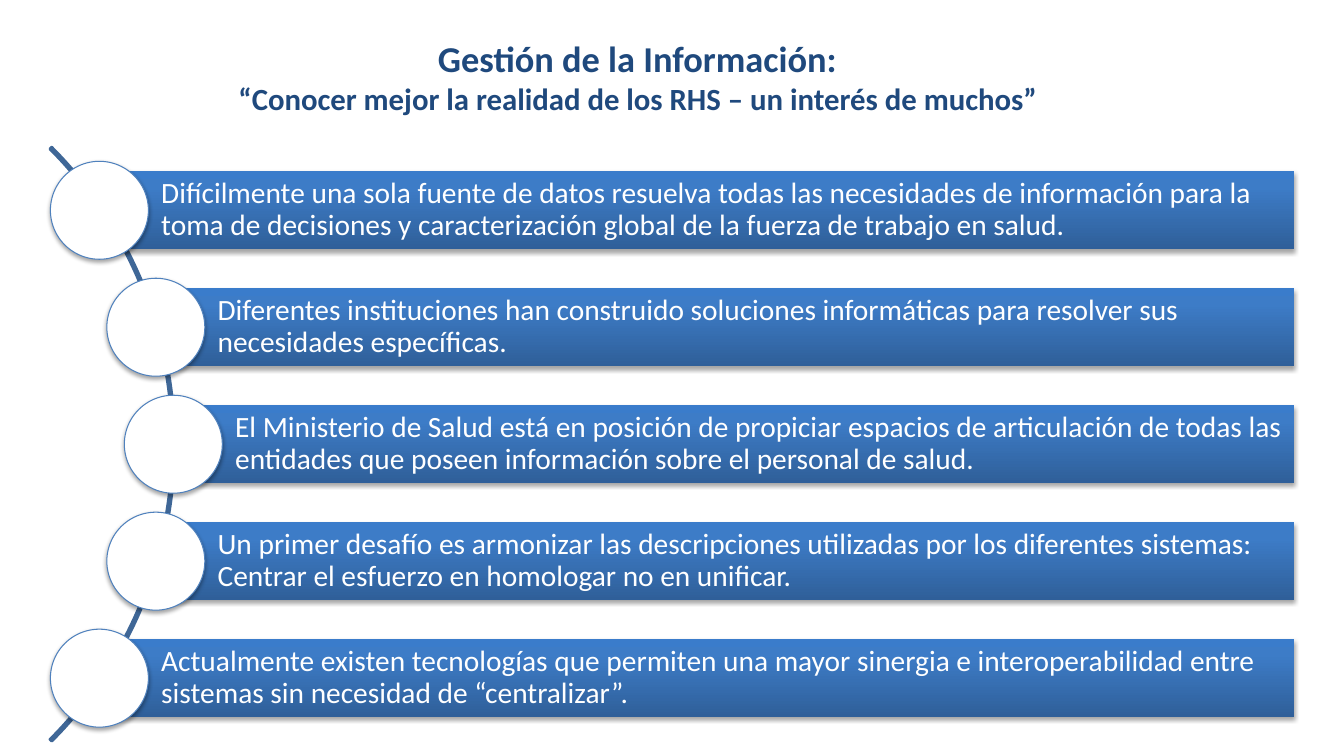
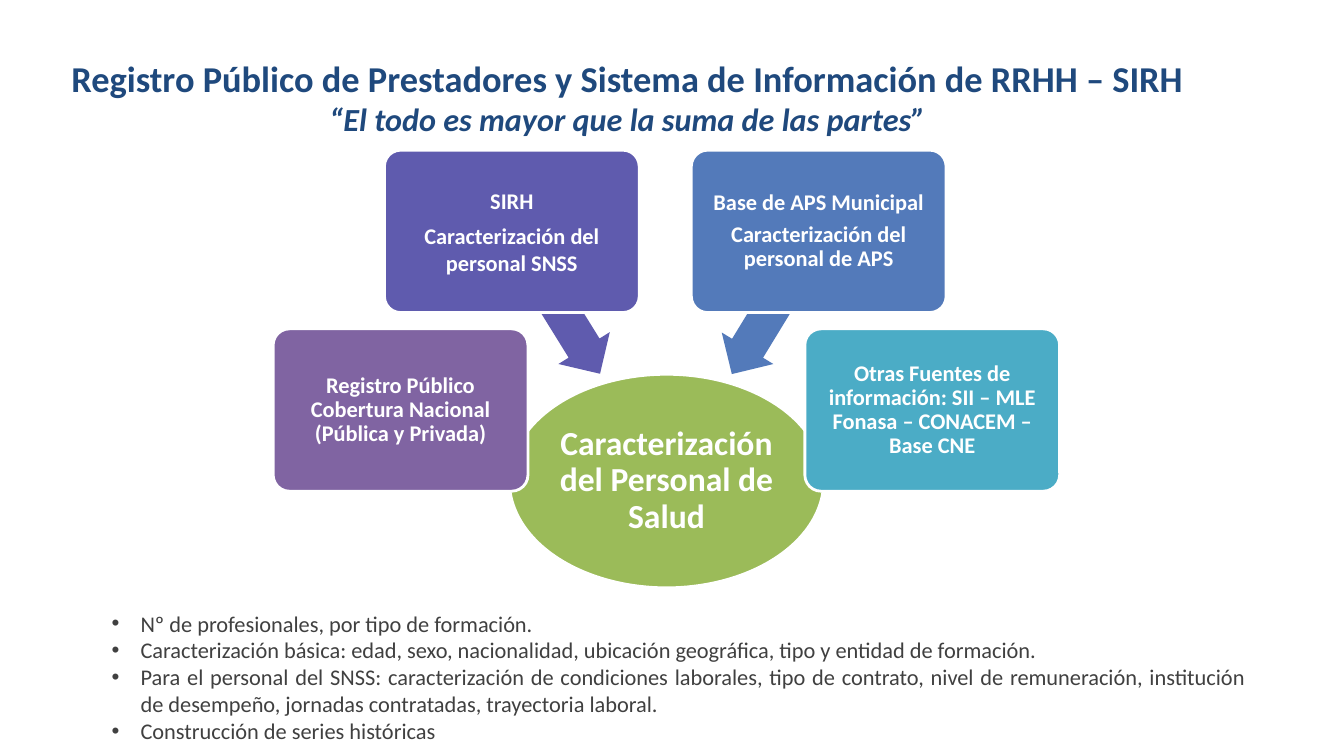
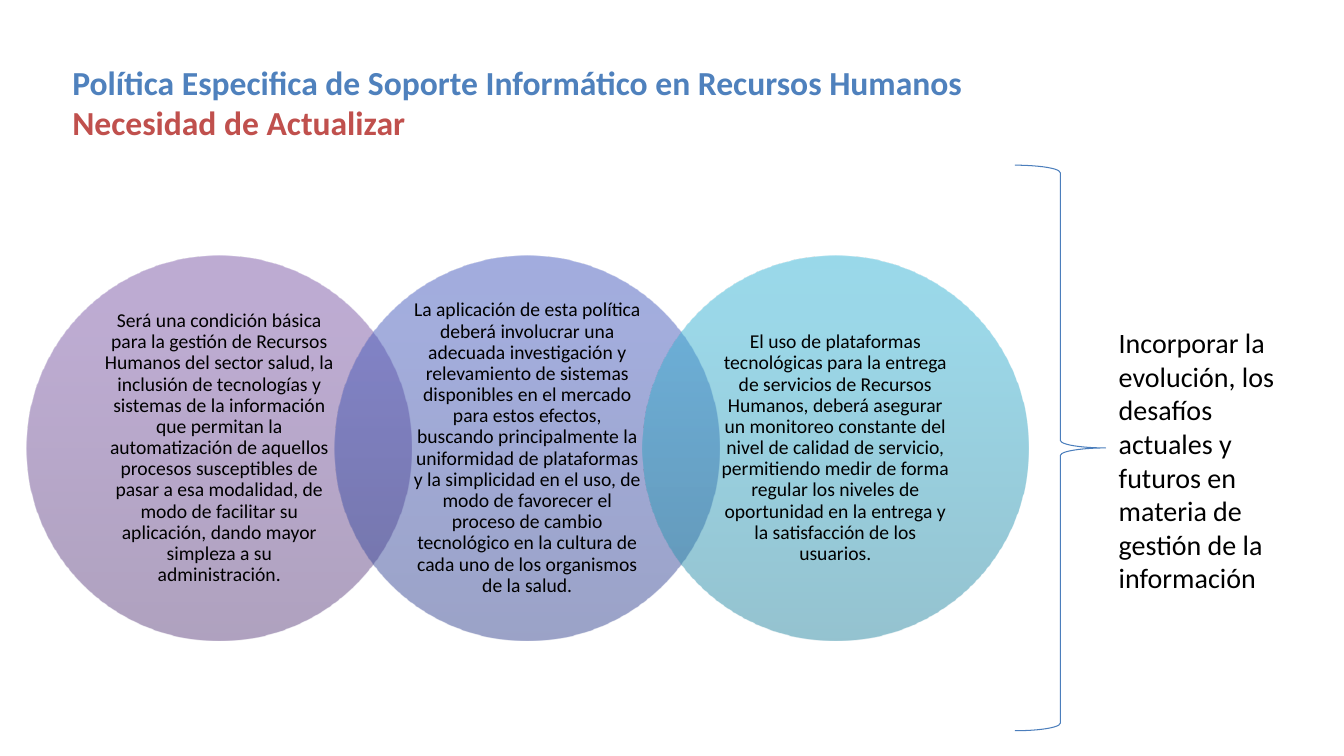
"""Build three slides on health workforce information."""
from dataclasses import dataclass, replace

from lxml.etree import SubElement as sub
from pptx import Presentation
from pptx.dml.color import RGBColor as Rgb
from pptx.enum.shapes import MSO_SHAPE as Geo
from pptx.enum.text import MSO_ANCHOR as Anchor, PP_ALIGN as Align
from pptx.oxml.ns import qn
from pptx.util import Pt


@dataclass(frozen=True)
class Theme:
    """Hold the colours, type sizes and font of the deck."""
    font: str = "Calibri"
    navy: str = "1F497D"
    blue: str = "4F81BD"
    red: str = "C0504D"
    white: str = "FFFFFF"
    black: str = "000000"
    gray: str = "404040"
    arc: str = "3F6797"
    brace: str = "4B7EBC"
    green: str = "9BBB59"
    plum: str = "8064A2"
    violet: str = "5F5BAE"
    steel: str = "537ABA"
    teal: str = "4BACC6"
    bar: tuple = ("2F5F99", "3D7CC7", "3A7CCB")
    rings: tuple = (("5F4480", "7B58A6", "7C57A8"),
                    ("374691", "475BBC", "455ABF"),
                    ("2A88A2", "37B1D2", "34B4D6"))
    head: int = 26
    motto: int = 23
    lead: int = 22
    hub: int = 24
    row: int = 21
    note: int = 20
    card: int = 16
    ring: int = 14


@dataclass(frozen=True)
class Style:
    """Hold the look of one paragraph."""
    size: int
    color: str
    bold: bool = False
    slant: bool = False
    align: Align = Align.CENTER
    pitch: float = 1.0
    after: float = 0
    bullet: bool = False


T = Theme()
HEAD = Style(T.head, T.navy, bold=True)
CARD = Style(T.card, T.white, bold=True, pitch=0.9, after=0.35)
LOOSE = replace(CARD, pitch=1.0)
HUB = replace(CARD, size=T.hub)
ROW = replace(CARD, size=T.row, bold=False, align=Align.LEFT)
RING = replace(CARD, size=T.ring, color=T.black, bold=False)
ITEM = Style(T.card, T.gray, align=Align.JUSTIFY, bullet=True)
NOTE = Style(T.note, T.black, align=Align.LEFT)
POLICY = Style(T.hub, T.blue, bold=True, align=Align.LEFT)

ROWS = (
    (36, "Difícilmente una sola fuente de datos resuelva todas las necesidades de información "
         "para la toma de decisiones y caracterización global de la fuerza de trabajo en salud."),
    (76.3, "Diferentes instituciones han construido soluciones informáticas para resolver sus "
           "necesidades específicas."),
    (88.8, "El Ministerio de Salud está en posición de propiciar espacios de articulación de "
           "todas las entidades que poseen información sobre el personal de salud."),
    (76.3, "Un primer desafío es armonizar las descripciones utilizadas por los diferentes "
           "sistemas: Centrar el esfuerzo en homologar no en unificar."),
    (36, "Actualmente existen tecnologías que permiten una mayor sinergia e interoperabilidad "
         "entre sistemas sin necesidad de “centralizar”."),
)
CARDS = (
    (195.1, 234.9, T.plum, CARD, ("Registro Público Cobertura Nacional (Pública y Privada)",)),
    (274.6, 107.3, T.violet, LOOSE, ("SIRH", "Caracterización del personal SNSS")),
    (493.8, 107.3, T.steel, CARD,
     ("Base de APS Municipal", "Caracterización del personal de APS")),
    (574.9, 234.9, T.teal, CARD,
     ("Otras Fuentes de información: SII – MLE Fonasa – CONACEM – Base CNE",)),
)
ITEMS = (
    "Nº de profesionales, por tipo de formación.",
    "Caracterización básica: edad, sexo, nacionalidad, ubicación geográfica, tipo y entidad "
    "de formación.",
    "Para el personal del SNSS: caracterización de condiciones laborales, tipo de contrato, "
    "nivel de remuneración, institución de desempeño, jornadas contratadas, trayectoria laboral.",
    "Construcción de series históricas",
)
RINGS = (
    "Será una condición básica para la gestión de Recursos Humanos del sector salud, la "
    "inclusión de tecnologías y sistemas de la información que permitan la automatización de "
    "aquellos procesos susceptibles de pasar a esa modalidad, de modo de facilitar su "
    "aplicación, dando mayor simpleza a su administración.",
    "La aplicación de esta política deberá involucrar una adecuada investigación y "
    "relevamiento de sistemas disponibles en el mercado para estos efectos, buscando "
    "principalmente la uniformidad de plataformas y la simplicidad en el uso, de modo de "
    "favorecer el proceso de cambio tecnológico en la cultura de cada uno de los organismos "
    "de la salud.",
    "El uso de plataformas tecnológicas para la entrega de servicios de Recursos Humanos, "
    "deberá asegurar un monitoreo constante del nivel de calidad de servicio, permitiendo "
    "medir de forma regular los niveles de oportunidad en la entrega y la satisfacción de "
    "los usuarios.",
)


def write(frame, lines, anchor=Anchor.MIDDLE, pads=(7.2, 3.6, 7.2, 3.6)):
    """Fill a text frame with (text, style) lines."""
    frame.word_wrap = True
    frame.vertical_anchor = anchor
    (frame.margin_left, frame.margin_top,
     frame.margin_right, frame.margin_bottom) = map(Pt, pads)
    for i, (text, style) in enumerate(lines):
        para = frame.add_paragraph() if i else frame.paragraphs[0]
        para.text = text
        para.alignment = style.align
        para.line_spacing = style.pitch
        para.space_after = Pt(style.after * style.size)
        if style.bullet:
            props = para._p.get_or_add_pPr()
            props.set("marL", str(Pt(20.6)))
            props.set("indent", str(-Pt(20.6)))
            sub(props, qn("a:buFont"), typeface="Arial")
            sub(props, qn("a:buChar"), char="•")
        font = para.font
        font.name, font.size = T.font, Pt(style.size)
        font.bold, font.italic = style.bold, style.slant
        font.color.rgb = Rgb.from_string(style.color)


def label(slide, box, lines, anchor=Anchor.MIDDLE):
    """Add a text box."""
    write(slide.shapes.add_textbox(*map(Pt, box)).text_frame, lines, anchor)


def shape(slide, kind, box, fill=None, line=None, width=0.75, adj=()):
    """Add a flat preset shape."""
    item = slide.shapes.add_shape(kind, *map(Pt, box))
    item.shadow.inherit = False
    for i, value in enumerate(adj):
        item.adjustments[i] = value
    if fill:
        item.fill.solid()
        item.fill.fore_color.rgb = Rgb.from_string(fill)
    else:
        item.fill.background()
    if line:
        item.line.color.rgb = Rgb.from_string(line)
        item.line.width = Pt(width)
    else:
        item.line.fill.background()
    return item


def blend(item, colors, alpha=100):
    """Give a shape an upward three-stop gradient."""
    item.fill.gradient()
    item.fill.gradient_angle = 90
    stops = item.element.spPr.find(qn("a:gradFill")).find(qn("a:gsLst"))
    stops.clear()
    for pos, color in zip((0, 80, 100), colors):
        stop = sub(stops, qn("a:gs"), pos=str(pos * 1000))
        tint = sub(stop, qn("a:srgbClr"), val=color)
        sub(tint, qn("a:alpha"), val=str(alpha * 1000))


def shade(item):
    """Give a shape a soft shadow below it."""
    effects = item.element.spPr.find(qn("a:effectLst"))
    outer = sub(effects, qn("a:outerShdw"), blurRad=str(Pt(3.1)), dist=str(Pt(1.8)),
                dir="5400000", rotWithShape="0")
    tint = sub(outer, qn("a:srgbClr"), val=T.black)
    sub(tint, qn("a:alpha"), val="35000")


def curve(slide):
    """Draw the rows strung along an arc."""
    label(slide, (20, 15, 871, 79), (
        ("Gestión de la Información:", HEAD),
        ("“Conocer mejor la realidad de los RHS – un interés de muchos”",
         replace(HEAD, size=T.lead))))
    shape(slide, Geo.BLOCK_ARC, (-475.2, 17.3, 600, 600), line=T.arc, width=2,
          adj=(189, 27, 0.003))
    dot, tall, right = 70, 55.7, 924.5
    for i, (left, text) in enumerate(ROWS):
        top = 115.2 + i * 83.55
        start = left + dot / 2
        bar = shape(slide, Geo.RECTANGLE,
                    (start, top + (dot - tall) / 2, right - start, tall))
        blend(bar, T.bar)
        shade(bar)
        write(bar.text_frame, [(text, ROW)], pads=(44.2, 4, 4, 4))
        shade(shape(slide, Geo.OVAL, (left, top, dot, dot), T.white, T.blue))


def merge(slide):
    """Draw the sources that feed the hub."""
    label(slide, (27.4, 18.7, 842.4, 101.5), (
        ("Registro Público de Prestadores y Sistema de Información de RRHH – SIRH", HEAD),
        ("“El todo es mayor que la suma de las partes”",
         replace(HEAD, size=T.motto, slant=True))))
    hub = shape(slide, Geo.OVAL, (363.8, 267.3, 224.6, 152.6), T.green, T.white, 2)
    write(hub.text_frame, [("Caracterización del Personal de Salud", HUB)], pads=[1.4] * 4)
    for left, turn, color in ((337, 238.2, T.violet), (494, 301.4, T.steel)):
        arrow = shape(slide, Geo.LEFT_ARROW, (left, 194.4, 120, 43.2), color, adj=(0.6, 0.5))
        arrow.rotation = turn
    for left, top, color, style, lines in CARDS:
        card = shape(slide, Geo.ROUNDED_RECTANGLE, (left, top, 182, 116), color, T.white, 2,
                     adj=(0.1,))
        write(card.text_frame, [(line, style) for line in lines], pads=[2.2] * 4)
    label(slide, (72.7, 432.7, 824.4, 101.5), [(item, ITEM) for item in ITEMS])


def chain(slide):
    """Draw the linked circles and their outcome."""
    label(slide, (44.6, 40.3, 825.8, 65.5), (
        ("Política Especifica de Soporte Informático en Recursos Humanos", POLICY),
        ("Necesidad de Actualizar", replace(POLICY, color=T.red))), Anchor.TOP)
    size = 275
    for i, (text, colors) in enumerate(zip(RINGS, T.rings)):
        ring = shape(slide, Geo.OVAL, (19.2 + i * size * 0.8, 182.7, size, size))
        blend(ring, colors, 50)
        write(ring.text_frame, [(text, RING)], pads=(15.1, 1.4, 15.1, 1.4))
    shape(slide, Geo.RIGHT_BRACE, (725, 118, 64.8, 404), line=T.brace)
    label(slide, (792, 229, 135.4, 200.9), [
        ("Incorporar la evolución, los desafíos actuales y futuros en materia de gestión de "
         "la información", NOTE)], Anchor.TOP)


def main():
    """Build and save the deck."""
    deck = Presentation()
    deck.slide_width, deck.slide_height = Pt(960), Pt(540)
    for draw in (curve, merge, chain):
        draw(deck.slides.add_slide(deck.slide_layouts[6]))
    deck.save("out.pptx")


if __name__ == "__main__":
    main()
